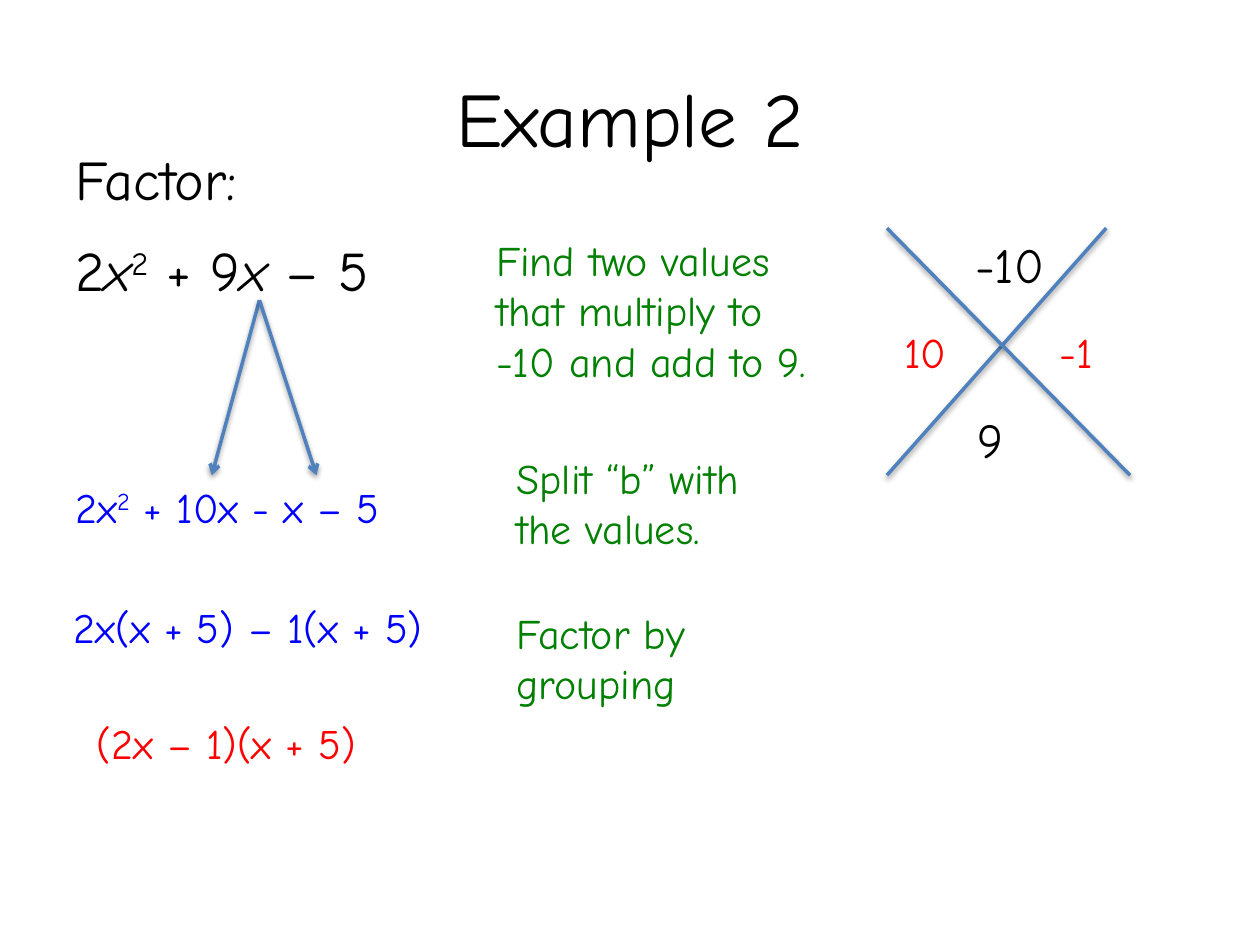
from lxml import etree
from pptx import Presentation
from pptx import util as u
from pptx.dml.color import RGBColor
from pptx.enum import shapes, text
from pptx.oxml.ns import qn

COLORS = {"ink": "000000", "line": "4F81BD", "answer": "FF0000",
          "work": "0000FF", "hint": "008000"}
FONT = "Comic Neue"

deck = Presentation()
deck.slide_width, deck.slide_height = u.Cm(25.4), u.Cm(19.05)
slide = deck.slides.add_slide(deck.slide_layouts[6])


def add_text(box, lines, size, color, wrap=False):
    frame = slide.shapes.add_textbox(*map(u.Cm, box)).text_frame
    frame.word_wrap = wrap
    for index, pieces in enumerate(lines):
        line = frame.add_paragraph() if index else frame.paragraphs[0]
        for piece in pieces:
            wording, style = piece if isinstance(piece, tuple) else (piece, "")
            run = line.add_run()
            run.text = wording
            run.font.name = FONT
            run.font.size = u.Pt(size)
            run.font.color.rgb = RGBColor.from_string(COLORS[color])
            if style == "italic":
                run.font.italic = True
            elif style == "super":
                run._r.get_or_add_rPr().set("baseline", "30000")
    return frame


def add_line(start, end, arrow=False):
    stroke = slide.shapes.add_connector(
        shapes.MSO_CONNECTOR.STRAIGHT, *map(u.Cm, start + end))
    stroke.line.color.rgb = RGBColor.from_string(COLORS["line"])
    stroke.line.width = u.Pt(2)
    if arrow:
        etree.SubElement(stroke.line._get_or_add_ln(), qn("a:tailEnd"), type="arrow")
    effects = etree.SubElement(stroke._element.spPr, qn("a:effectLst"))
    shadow = etree.SubElement(effects, qn("a:outerShdw"), blurRad="40000",
                              dist="20000", dir="5400000", rotWithShape="0")
    shade = etree.SubElement(shadow, qn("a:srgbClr"), val=COLORS["ink"])
    etree.SubElement(shade, qn("a:alpha"), val="38000")


title = add_text((1.27, 0.76, 22.86, 3.18), [["Example 2"]], 44, "ink", True)
title.vertical_anchor = text.MSO_ANCHOR.MIDDLE
title.paragraphs[0].alignment = text.PP_ALIGN.CENTER

problem = add_text(
    (1.27, 2.51, 22.86, 12.57),
    [["Factor:"],
     ["2", ("x", "italic"), ("2", "super"), " + 9", ("x", "italic"), " – 5"]],
    32, "ink", True)
for line in problem.paragraphs:
    line.line_spacing = 1.2
    line.space_before = u.Pt(6.4)

add_line((17.88, 9.58), (22.3, 4.6))
add_line((17.88, 4.6), (22.78, 9.58))
add_text((19.41, 4.6, 2.16, 1.45), [["-10"]], 28, "ink", True)
add_text((19.46, 8.13, 2.11, 1.45), [["9"]], 28, "ink", True)

for split_end in (4.27, 6.38):
    add_line((5.23, 6.05), (split_end, 9.58), arrow=True)

for box, color, lines in [
    ((17.98, 6.45, 1.42, 1.27), "answer", [["10"]]),
    ((21.11, 6.45, 1.24, 1.27), "answer", [["-1"]]),
    ((1.27, 9.58, 7.01, 1.27), "work", [["2x", ("2", "super"), " + 10x - x – 5"]]),
    ((1.24, 12.01, 7.95, 1.27), "work", [["2x(x + 5) – 1(x + 5)"]]),
    ((1.7, 14.33, 6.02, 1.27), "answer", [["(2x – 1)(x + 5)"]]),
    ((9.75, 4.6, 7.21, 3.33), "hint",
     [["Find two values"], ["that multiply to"], ["-10 and add to 9."]]),
    ((10.16, 8.99, 5.84, 2.31), "hint", [["Split “b” with"], ["the values."]]),
    ((10.16, 12.12, 4.37, 2.31), "hint", [["Factor by"], ["grouping"]]),
]:
    add_text(box, lines, 24, color)

deck.save("out.pptx")
